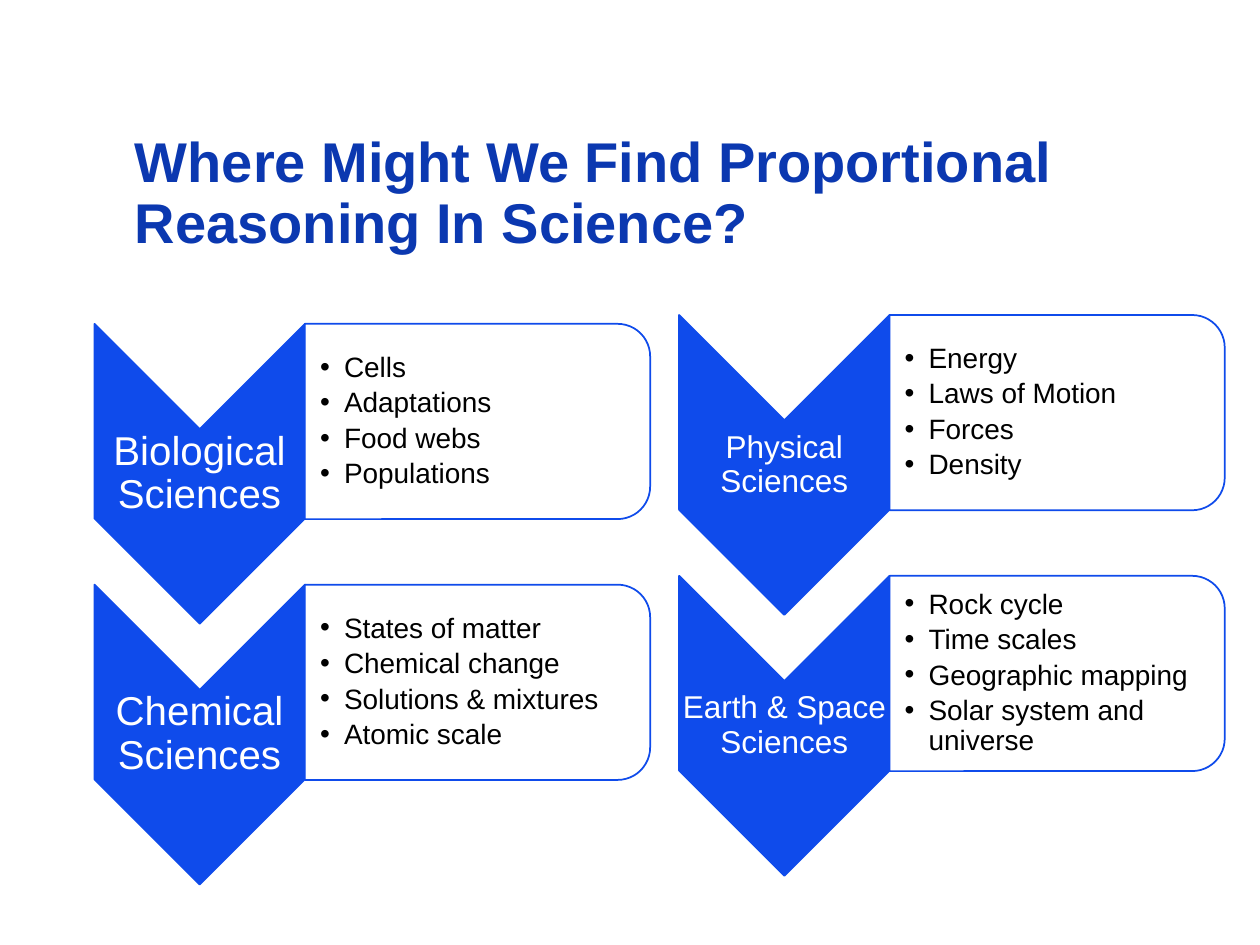
from dataclasses import dataclass

from lxml.etree import SubElement
from pptx import Presentation
from pptx.dml.color import RGBColor
from pptx.enum.shapes import MSO_SHAPE
from pptx.enum.text import MSO_ANCHOR, MSO_AUTO_SIZE, PP_ALIGN
from pptx.oxml.ns import qn
from pptx.shapes.autoshape import Shape
from pptx.slide import Slide
from pptx.text.text import TextFrame
from pptx.util import Inches, Pt


@dataclass(frozen=True)
class Theme:
    font: str = "Arial"
    title_color: RGBColor = RGBColor(0x0B, 0x38, 0xB0)
    accent: RGBColor = RGBColor(0x0F, 0x4B, 0xEB)
    white: RGBColor = RGBColor(0xFF, 0xFF, 0xFF)
    black: RGBColor = RGBColor(0, 0, 0)
    title_size: int = 32
    list_size: int = 16
    line_width: int = 1


@dataclass(frozen=True)
class Field:
    name: str
    topics: tuple[str, ...]


@dataclass(frozen=True)
class Column:
    left: float
    top: float
    card_width: float
    label_size: int
    fields: tuple[Field, ...]


THEME = Theme()
ROW_PITCH = 2.07
CHEVRON_WIDTH = 1.67
CHEVRON_HEIGHT = 2.38
CARD_HEIGHT = 1.55
LABEL_HEIGHT = 0.71
LIST_HEIGHT = 1.4
LIST_RIGHT_GAP = 0.07
LIST_INDENT = 0.19

COLUMNS = (
    Column(0.75, 2.57, 2.74, 23, (
        Field("Biological Sciences", ("Cells", "Adaptations", "Food webs", "Populations")),
        Field("Chemical Sciences", ("States of matter", "Chemical change",
                                    "Solutions & mixtures", "Atomic scale")),
    )),
    Column(5.39, 2.5, 2.66, 18, (
        Field("Physical Sciences", ("Energy", "Laws of Motion", "Forces", "Density")),
        Field("Earth & Space Sciences", ("Rock cycle", "Time scales", "Geographic mapping",
                                         "Solar system and universe")),
    )),
)


def place(shape: Shape, left: float, top: float, width: float, height: float) -> None:
    shape.left, shape.top = Inches(left), Inches(top)
    shape.width, shape.height = Inches(width), Inches(height)


def set_frame(frame: TextFrame, left: float, top: float, right: float, bottom: float) -> None:
    frame.word_wrap = True
    frame.auto_size = MSO_AUTO_SIZE.NONE
    frame.vertical_anchor = MSO_ANCHOR.MIDDLE
    frame.margin_left, frame.margin_top = Inches(left), Inches(top)
    frame.margin_right, frame.margin_bottom = Inches(right), Inches(bottom)


def format_text(frame: TextFrame, size: int, color: RGBColor, align: PP_ALIGN,
                bold: bool = False, space_after: int = 0) -> None:
    for para in frame.paragraphs:
        para.alignment = align
        para.line_spacing = 0.9
        para.space_before = Pt(0)
        para.space_after = Pt(space_after)
        for span in para.runs:
            span.font.name = THEME.font
            span.font.size = Pt(size)
            span.font.bold = bold
            span.font.color.rgb = color


def add_turned_shape(page: Slide, kind: MSO_SHAPE, left: float, top: float,
                     width: float, height: float, fill: RGBColor) -> Shape:
    shape = page.shapes.add_shape(kind, 0, 0, 0, 0)
    place(shape, left + (width - height) / 2, top + (height - width) / 2, height, width)
    shape.rotation = 90
    shape.shadow.inherit = False
    shape.fill.solid()
    shape.fill.fore_color.rgb = fill
    shape.line.color.rgb = THEME.accent
    shape.line.width = Pt(THEME.line_width)
    return shape


def fill_list(box: Shape, topics: tuple[str, ...]) -> None:
    frame = box.text_frame
    set_frame(frame, 0.12, 0.01, 0.01, 0.01)
    frame.text = "\n".join(topics)
    format_text(frame, THEME.list_size, THEME.black, PP_ALIGN.LEFT, space_after=3)
    for para in frame.paragraphs:
        para.level = 1
        properties = para._p.get_or_add_pPr()
        properties.set("marL", str(Inches(LIST_INDENT)))
        properties.set("indent", str(-Inches(LIST_INDENT)))
        SubElement(properties, qn("a:buFont")).set("typeface", THEME.font)
        SubElement(properties, qn("a:buChar")).set("char", "•")


def draw_field(page: Slide, column: Column, row: int, list_box: Shape) -> None:
    field = column.fields[row]
    top = column.top + row * ROW_PITCH
    card_left = column.left + CHEVRON_WIDTH

    add_turned_shape(page, MSO_SHAPE.CHEVRON, column.left, top,
                     CHEVRON_WIDTH, CHEVRON_HEIGHT, THEME.accent)
    label = page.shapes.add_textbox(0, 0, 0, 0)
    place(label, column.left, top + CHEVRON_WIDTH / 2, CHEVRON_WIDTH, LABEL_HEIGHT)
    set_frame(label.text_frame, 0.01, 0.01, 0.01, 0.01)
    label.text_frame.text = field.name
    format_text(label.text_frame, column.label_size, THEME.white, PP_ALIGN.CENTER)

    card = add_turned_shape(page, MSO_SHAPE.ROUND_2_SAME_RECTANGLE, card_left, top,
                            column.card_width, CARD_HEIGHT, THEME.white)
    card_color = card.element.spPr.find(qn("a:solidFill"))[0]
    SubElement(card_color, qn("a:alpha")).set("val", "90000")
    place(list_box, card_left, top + (CARD_HEIGHT - LIST_HEIGHT) / 2,
          column.card_width - LIST_RIGHT_GAP, LIST_HEIGHT)
    fill_list(list_box, field.topics)
    card.element.addnext(list_box.element)


def main() -> None:
    deck = Presentation()
    deck.slide_width, deck.slide_height = Inches(10), Inches(7.5)
    page = deck.slides.add_slide(deck.slide_layouts.get_by_name("Comparison"))

    title = page.shapes.title
    place(title, 1, 0.92, 7.68, 1.25)
    set_frame(title.text_frame, 0.07, 0.03, 0.07, 0.03)
    title.text_frame.text = "Where Might We Find Proportional Reasoning In Science?"
    format_text(title.text_frame, THEME.title_size, THEME.title_color, PP_ALIGN.LEFT, bold=True)

    list_boxes = iter([box for box in page.placeholders if box.placeholder_format.idx > 0])
    for column in COLUMNS:
        for row in range(len(column.fields)):
            draw_field(page, column, row, next(list_boxes))

    deck.save("out.pptx")


if __name__ == "__main__":
    main()
